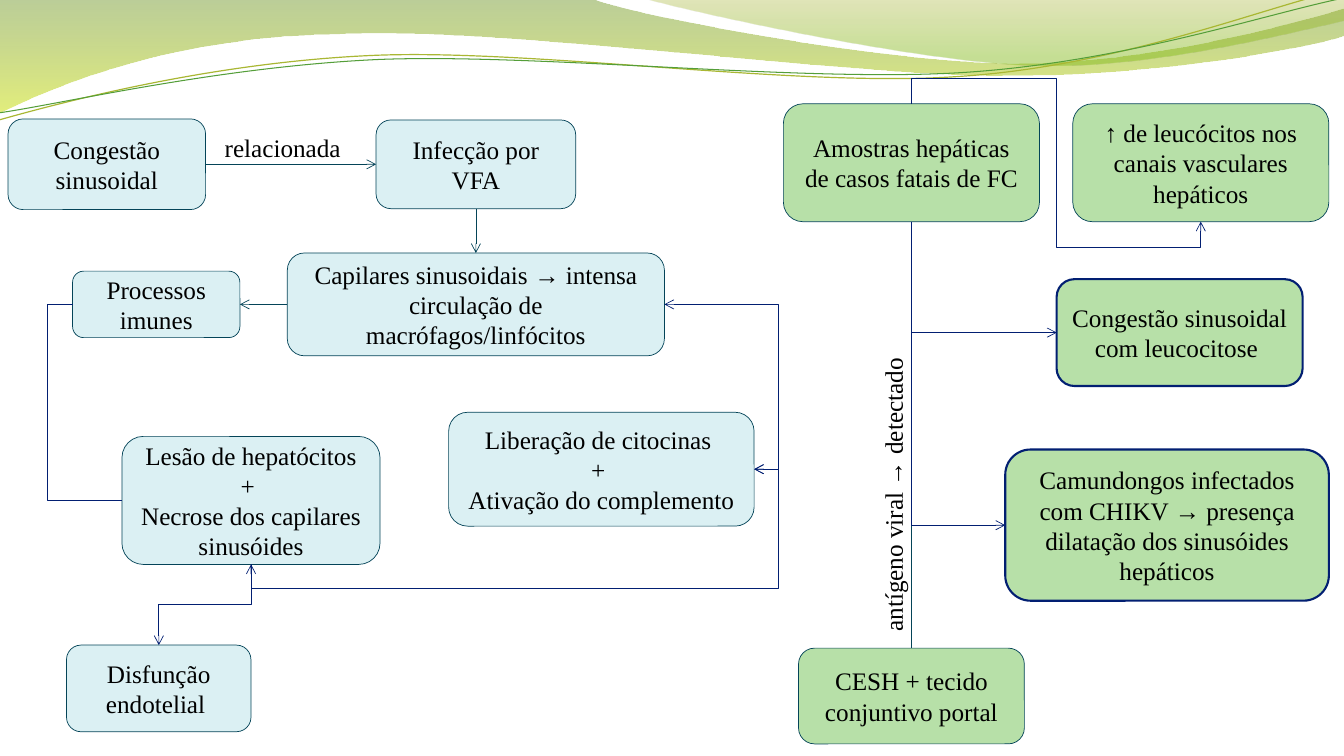
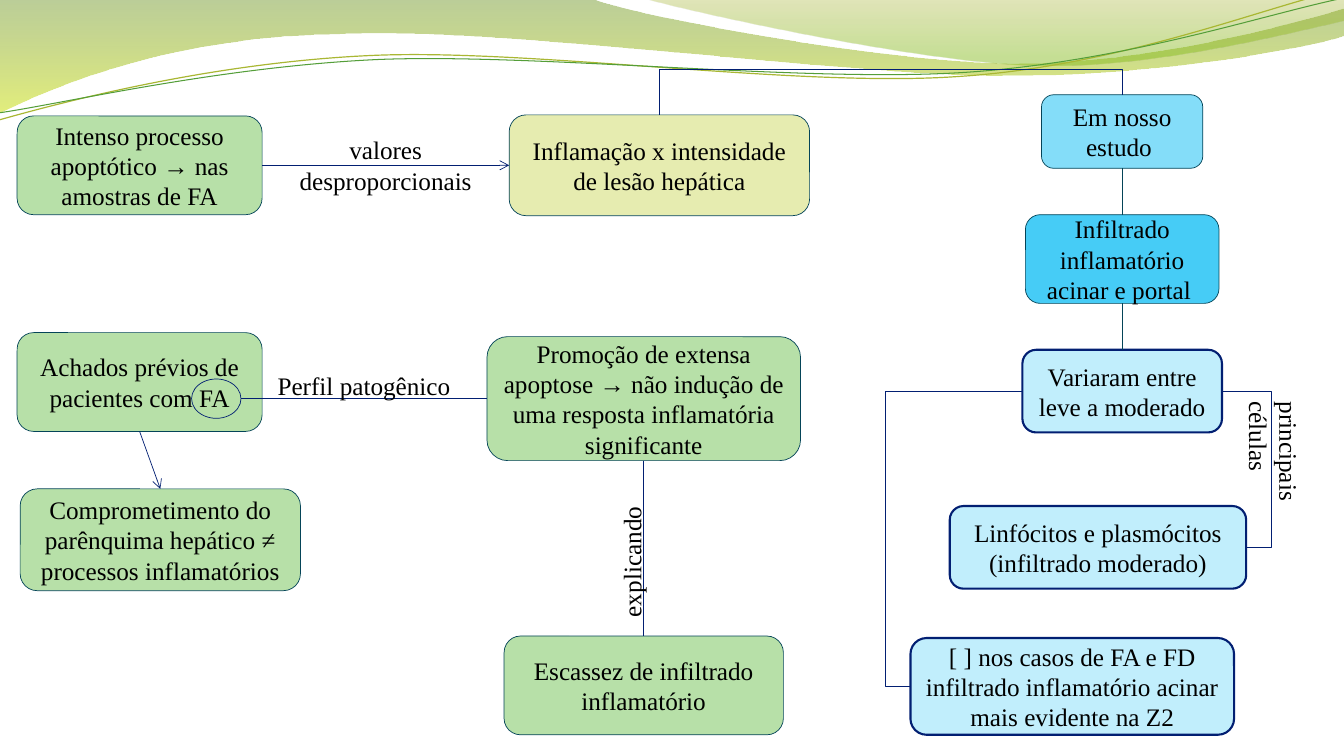
import pptx
import pptx.util
import pptx.dml.color
import pptx.enum.shapes
import pptx.enum.text
import pptx.oxml.ns

SHAPE = pptx.enum.shapes.MSO_SHAPE
WIRE = pptx.enum.shapes.MSO_CONNECTOR
qn = pptx.oxml.ns.qn

# Palette
TEAL, NAVY, BLACK = "044458", "021F72", "000000"
ICE, GREEN, LIME = "DBF0F3", "B7E0A8", "E6ECB0"
SKY, AZURE, PALE = "84DDF9", "46CCF6", "C1EEFC"
TOP, LEFT, BOTTOM, RIGHT = range(4)

# Wavy band of the master: start, then lines (2 numbers) or curves (6), in inches
BANDS = [
    dict(start=(0, 0), stops=[(0, "69921C", 45), (1, "CCE10F", 55)], steps=[
        (5.87, -0.01), (6.34, 0.17, 8.84, 0.63, 10.11, 0.63),
        (11.37, 0.63, 12.77, 0.26, 13.33, 0.09), (13.34, 0.36),
        (13.11, 0.44, 11.59, 0.76, 9.94, 0.75),
        (8.29, 0.75, 5.09, 0.28, 3.43, 0.34),
        (1.72, 0.36, 0.61, 0.83, -0.02, 1.13)]),
    dict(start=(6.38, -0.01), stops=[(0, "9BAA1A", 30), (0.8, "81BA16", 45)], steps=[
        (6.79, 0.11, 9.09, 0.62, 10.25, 0.65),
        (11.4, 0.69, 12.82, 0.32, 13.33, 0.21), (13.33, 0)]),
    dict(start=(-0.01, 1.19), line=("A9B733", 0.85), steps=[
        (0.63, 1.01, 2.1, 0.62, 3.69, 0.55),
        (5.27, 0.48, 7.89, 0.87, 9.49, 0.76),
        (11.1, 0.66, 12.51, 0.08, 13.3, -0.1)]),
    dict(start=(-0.01, 1.12), line=("549E39", 0.75), steps=[
        (0.62, 1.03, 2.18, 0.66, 3.77, 0.59),
        (5.37, 0.53, 7.96, 0.82, 9.55, 0.72),
        (11.14, 0.62, 12.55, 0.14, 13.33, -0.02)]),
]

# Boxes: name -> text, (left, top, width, height) in inches, fill, line, line width
# Links: from, side, to, side, options; turns lists where an elbow bends
# Labels: text, place, rotation, alignment
SLIDES = [
    dict(
        boxes={
            "sample": ("Amostras hepáticas de casos fatais de FC",
                       (7.77, 1.03, 2.54, 1.17), GREEN, TEAL, 0.5),
            "white": ("↑ de leucócitos nos canais vasculares hepáticos",
                      (10.64, 1.03, 2.54, 1.17), GREEN, TEAL, 0.5),
            "packed": ("Congestão sinusoidal com leucocitose ",
                       (10.48, 2.77, 2.44, 1.06), GREEN, NAVY, 1.5),
            "mice": ("Camundongos infectados com CHIKV → presença dilatação dos "
                     "sinusóides hepáticos", (9.97, 4.46, 3.21, 1.5), GREEN, NAVY, 1.5),
            "portal": ("CESH + tecido conjuntivo portal",
                       (7.92, 6.43, 2.24, 0.95), GREEN, TEAL, 0.5),
            "sinus": ("Congestão sinusoidal", (0.08, 1.18, 1.96, 0.9), ICE, TEAL, 0.5),
            "virus": ("Infecção por VFA", (3.73, 1.19, 1.98, 0.88), ICE, TEAL, 0.5),
            "vessel": ("Capilares sinusoidais → intensa circulação de "
                       "macrófagos/linfócitos", (2.85, 2.51, 3.74, 1.02), ICE, TEAL, 0.5),
            "immune": ("Processos imunes", (0.72, 2.69, 1.66, 0.66), ICE, TEAL, 0.5),
            "lesion": ("Lesão de hepatócitos + \nNecrose dos capilares sinusóides",
                       (1.21, 4.33, 2.56, 1.27), ICE, TEAL, 0.5),
            "release": ("Liberação de citocinas \n+ \nAtivação do complemento",
                        (4.45, 4.09, 3.03, 1.13), ICE, TEAL, 0.5),
            "lining": ("Disfunção endotelial ", (0.66, 6.4, 1.83, 0.86), ICE, TEAL, 0.5),
        },
        links=[
            ("portal", TOP, "sample", BOTTOM, dict(color=TEAL)),
            ("sinus", RIGHT, "virus", LEFT, dict(color=TEAL, tail=True)),
            ("virus", BOTTOM, "vessel", TOP, dict(color=TEAL, tail=True)),
            ("vessel", LEFT, "immune", RIGHT, dict(color=TEAL, tail=True)),
            ("immune", LEFT, "lesion", LEFT, dict(turns=[0.47])),
            ("release", RIGHT, "vessel", RIGHT, dict(turns=[7.72], head=True, tail=True)),
            ("lesion", BOTTOM, "release", RIGHT,
             dict(turns=[5.84, 7.72], head=True, tail=True)),
            ("lesion", BOTTOM, "lining", TOP, dict(turns=[6], tail=True)),
            ("sample", TOP, "white", BOTTOM, dict(turns=[0.78, 10.48, 2.45], tail=True)),
            ("sample", BOTTOM, "packed", LEFT, dict(turns=[], tail=True)),
            ("sample", BOTTOM, "mice", LEFT, dict(turns=[], tail=True)),
        ],
        labels=[
            ("relacionada", (2.13, 1.26, 1.61, 0.4), 0, "LEFT"),
            ("antígeno viral → detectado", (7.35, 4.71, 3.01, 0.4), 270, "CENTER"),
        ],
    ),
    dict(
        boxes={
            "study": ("Em nosso estudo ", (10.33, 0.94, 1.6, 0.73), SKY, TEAL, 0.5),
            "acinar": ("Infiltrado inflamatório acinar e portal ",
                       (10.17, 2.13, 1.92, 0.88), AZURE, TEAL, 0.5),
            "range": ("Variaram entre leve a moderado",
                      (10.14, 3.47, 1.98, 0.82), PALE, NAVY, 1.5),
            "cells": ("Linfócitos e plasmócitos (infiltrado moderado)",
                      (9.42, 5.02, 2.94, 0.82), PALE, NAVY, 1.5),
            "zone": ("[ ] nos casos de FA e FD\ninfiltrado inflamatório acinar mais "
                     "evidente na Z2", (9.03, 6.33, 3.21, 0.96), PALE, NAVY, 1.5),
            "death": ("Intenso processo apoptótico → nas amostras de FA",
                      (0.17, 1.15, 2.43, 0.98), GREEN, TEAL, 0.5),
            "degree": ("Inflamação x intensidade de lesão hepática",
                       (5.05, 1.14, 2.98, 1), LIME, TEAL, 0.5),
            "prior": ("Achados prévios de pacientes com FA",
                      (0.17, 3.3, 2.43, 0.98), GREEN, TEAL, 0.5),
            "damage": ("Comprometimento do parênquima hepático ≠ processos "
                       "inflamatórios", (0.2, 4.85, 2.78, 1.01), GREEN, TEAL, 0.5),
            "extent": ("Promoção de extensa apoptose → não indução de uma resposta "
                       "inflamatória significante", (4.83, 3.34, 3.11, 1.23),
                       GREEN, TEAL, 0.5),
            "scarce": ("Escassez de infiltrado inflamatório",
                       (5, 6.31, 2.77, 0.98), GREEN, TEAL, 0.5),
            "ring": ("", (1.9, 3.76, 0.49, 0.39), None, NAVY, 0.5),
        },
        links=[
            ("acinar", BOTTOM, "range", TOP, dict(color=TEAL)),
            ("acinar", TOP, "study", BOTTOM, dict(color=TEAL)),
            ("range", LEFT, "zone", LEFT, dict(turns=[8.78])),
            ("range", RIGHT, "cells", RIGHT, dict(turns=[12.61])),
            ("death", RIGHT, "degree", LEFT, dict(tail=True)),
            ("study", TOP, "degree", TOP, dict(turns=[0.69])),
            ("prior", BOTTOM, "damage", TOP, dict(tail=True)),
            ("ring", RIGHT, "extent", LEFT, {}),
            ("extent", BOTTOM, "scarce", TOP, {}),
        ],
        labels=[
            ("principais\ncélulas", (11.88, 4.29, 1.52, 0.71), 90, "LEFT"),
            ("valores\ndesproporcionais", (2.75, 1.29, 2.15, 0.69), 0, "CENTER"),
            ("Perfil patogênico", (2.59, 3.48, 2.04, 0.69), 0, "CENTER"),
            ("explicando", (5.57, 5.23, 1.38, 0.69), 270, "CENTER"),
        ],
    ),
]


def inch(num):
    return pptx.util.Cm(num * 2.54)


def rgb(code):
    return pptx.dml.color.RGBColor.from_string(code)


def stroke(line, color, width):
    line.color.rgb = rgb(color)
    line.width = pptx.util.Pt(width)


def write(frame, text, align="CENTER", size=18, color=BLACK, font="Times New Roman"):
    frame.word_wrap = True
    frame.vertical_anchor = pptx.enum.text.MSO_ANCHOR.MIDDLE
    for i, row in enumerate(text.split("\n")):
        para = frame.paragraphs[0] if i == 0 else frame.add_paragraph()
        para.alignment = getattr(pptx.enum.text.PP_ALIGN, align)
        for part in filter(None, row.partition("→")):
            run = para.add_run()
            run.text = part
            run.font.size = pptx.util.Pt(size)
            run.font.name = "Arial" if part == "→" else font
            run.font.color.rgb = rgb(color)


def outline(slide, start, steps, closed):
    """Draw straight legs through all points, then join each curve's three legs."""
    dots = [step[k:k + 2] for step in steps for k in range(0, len(step), 2)]
    pen = slide.shapes.build_freeform(*map(inch, start))
    pen.add_line_segments([tuple(map(inch, dot)) for dot in dots], close=closed)
    shape = pen.convert_to_shape()
    legs = iter(list(shape.element.spPr.iter(qn("a:lnTo"))))
    for step in steps:
        first = next(legs)
        if len(step) == 6:
            curve = first.makeelement(qn("a:cubicBezTo"))
            first.addprevious(curve)
            for leg in (first, next(legs), next(legs)):
                curve.append(leg[0])
                leg.getparent().remove(leg)
    return shape


def wave(slide, start, steps, stops=None, line=None):
    shape = outline(slide, start, steps, bool(stops))
    shape.shadow.inherit = False
    if line:
        shape.fill.background()
        stroke(shape.line, *line)
        return shape
    shape.line.fill.background()
    shape.fill.gradient()
    shape.fill.gradient_angle = 270
    for stop, (place, color, _) in zip(shape.fill.gradient_stops, stops):
        stop.position = place
        stop.color.rgb = rgb(color)
    tints = list(shape.element.spPr.iter(qn("a:srgbClr")))
    for tint, (_, _, alpha) in zip(tints, stops):
        tint.append(tint.makeelement(qn("a:alpha"), {"val": str(alpha * 1000)}))
    return shape


def box(slide, text, place, fill, color, width):
    kind = SHAPE.ROUNDED_RECTANGLE if fill else SHAPE.OVAL
    shape = slide.shapes.add_shape(kind, *map(inch, place))
    shape.shadow.inherit = False
    if fill:
        shape.fill.solid()
        shape.fill.fore_color.rgb = rgb(fill)
        write(shape.text_frame, text)
    else:
        shape.fill.background()
    stroke(shape.line, color, width)
    return shape


def side(shape, num):
    x, y, w, h = shape.left, shape.top, shape.width, shape.height
    return [(x + w // 2, y), (x, y + h // 2), (x + w // 2, y + h), (x + w, y + h // 2)][num]


def bend(wire, start, end, down, turns):
    """Shape an elbow that leaves start (downwards or sideways) and bends at turns."""
    span = [b - a for a, b in zip(start, end)]
    wide, high = (span[1], -span[0]) if down else span
    wire.width, wire.height = abs(wide), abs(high)
    wire.left = (start[0] + end[0] - abs(wide)) // 2
    wire.top = (start[1] + end[1] - abs(high)) // 2
    frame = wire.element.spPr.find(qn("a:xfrm"))
    for key, val in (("rot", 5400000 * down), ("flipH", int(wide < 0)),
                     ("flipV", int(high < 0))):
        frame.set(key, str(val))
    geom = wire.element.spPr.find(qn("a:prstGeom"))
    geom.set("prst", f"bentConnector{len(turns) + 2}")
    guides = geom.find(qn("a:avLst"))
    for i, turn in enumerate(turns):
        axis = (i + down) % 2
        ratio = (inch(turn) - start[axis]) / span[axis]
        guides.append(guides.makeelement(qn("a:gd"), {
            "name": f"adj{i + 1}", "fmla": f"val {round(ratio * 100000)}"}))


def link(slide, src, out, dst, into, turns=None, color=NAVY, head=False, tail=False):
    start, end = side(src, out), side(dst, into)
    kind = WIRE.STRAIGHT if turns is None else WIRE.ELBOW
    wire = slide.shapes.add_connector(kind, *start, *end)
    if src.auto_shape_type != SHAPE.OVAL:
        wire.begin_connect(src, out)
    wire.end_connect(dst, into)
    if turns is not None:
        bend(wire, start, end, out in (TOP, BOTTOM), turns)
    stroke(wire.line, color, 0.5)
    props = wire.element.spPr
    edge = props.find(qn("a:ln"))
    for tag, show in (("a:headEnd", head), ("a:tailEnd", tail)):
        if show:
            edge.append(edge.makeelement(qn(tag), {"type": "arrow"}))
    props.append(props.makeelement(qn("a:effectLst")))


def label(slide, text, place, turn, align):
    area = slide.shapes.add_textbox(*map(inch, place))
    area.rotation = turn
    write(area.text_frame, text, align=align)


def main():
    deck = pptx.Presentation()
    deck.slide_width, deck.slide_height = inch(13.33), inch(7.5)
    blank = deck.slide_layouts[6]
    pages = [deck.slides.add_slide(blank) for _ in SLIDES]

    # Band: drawn once, then moved behind everything on the master
    tree = blank.slide_master.shapes.element
    for i, band in enumerate(BANDS):
        tree.insert(2 + i, wave(pages[0], **band).element)

    for page, data in zip(pages, SLIDES):
        made = {name: box(page, *spec) for name, spec in data["boxes"].items()}
        for src, out, dst, into, opts in data["links"]:
            link(page, made[src], out, made[dst], into, **opts)
        for item in data["labels"]:
            label(page, *item)
    deck.save("out.pptx")


if __name__ == "__main__":
    main()
